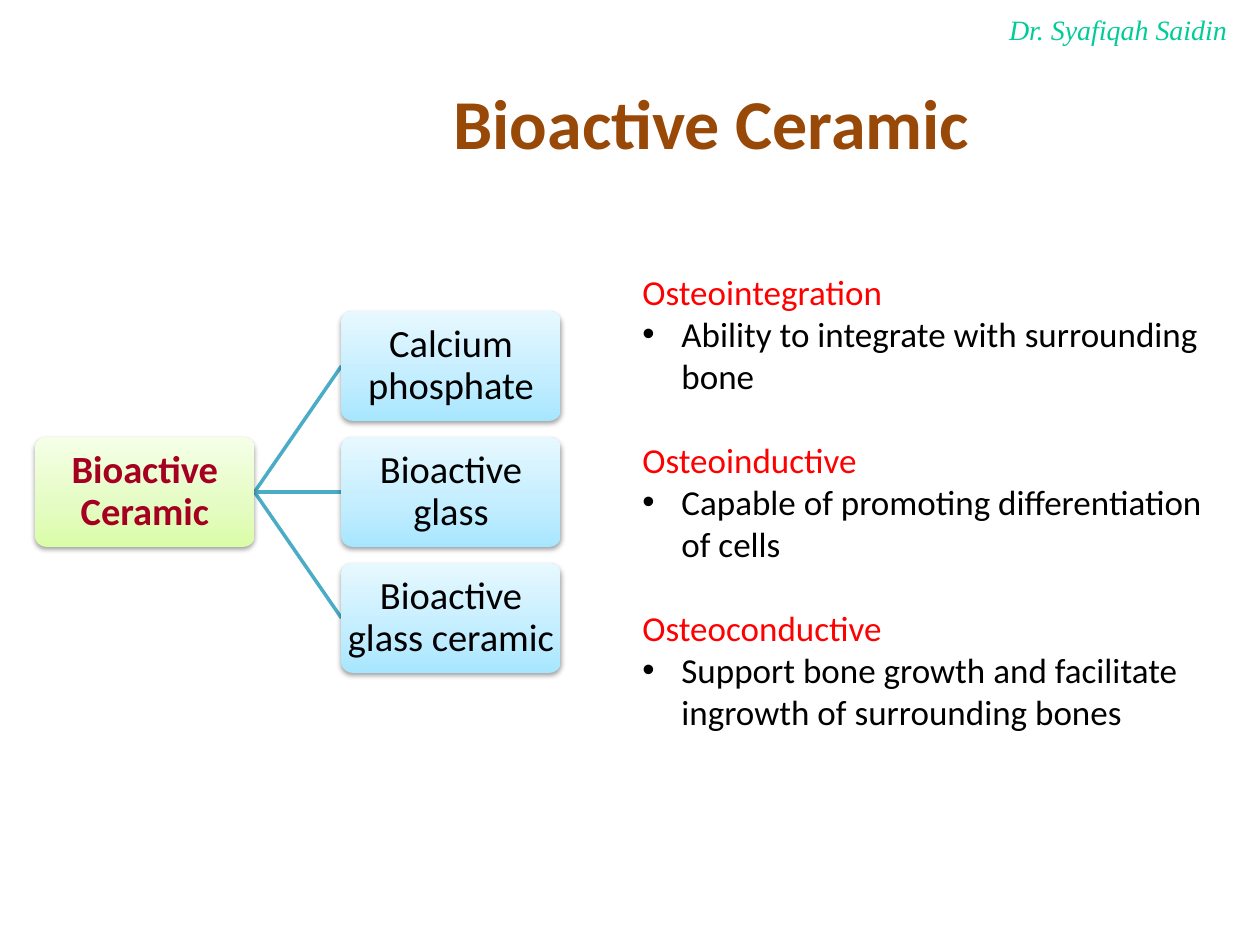
import pptx
import pptx.util
import pptx.dml.color
import pptx.enum.shapes
import pptx.enum.text
import pptx.oxml
import pptx.oxml.ns
from pptx.util import Inches

NAMESPACE = pptx.oxml.ns.nsdecls("a")
ALIGN = pptx.enum.text.PP_ALIGN
ANCHOR = pptx.enum.text.MSO_ANCHOR


def color(hex_string):
    return pptx.dml.color.RGBColor.from_string(hex_string)


def format_font(paragraph, size, hex_string, name="Calibri", bold=False, italic=False):
    for run in paragraph.runs:
        run.font.name = name
        run.font.size = pptx.util.Pt(size)
        run.font.bold = bold
        run.font.italic = italic
        run.font.color.rgb = color(hex_string)


presentation = pptx.Presentation()
presentation.slide_width = Inches(10)
presentation.slide_height = Inches(7.5)
slide = presentation.slides.add_slide(presentation.slide_layouts[5])

# Title
title = slide.shapes.title
title.left, title.top = Inches(3.5), Inches(0.58)
title.width, title.height = Inches(4.34), Inches(0.77)
title.text_frame.text = "Bioactive Ceramic"
title.text_frame.word_wrap = False
title.text_frame.auto_size = pptx.enum.text.MSO_AUTO_SIZE.NONE
title.text_frame.vertical_anchor = ANCHOR.MIDDLE
title.text_frame.paragraphs[0].alignment = ALIGN.LEFT
format_font(title.text_frame.paragraphs[0], 40, "984807", bold=True)

# Author
author = slide.shapes.add_textbox(Inches(7.91), Inches(0.05), Inches(2.01), Inches(0.37))
author.text_frame.text = "Dr. Syafiqah Saidin"
author.text_frame.word_wrap = False
format_font(author.text_frame.paragraphs[0], 16, "00CC99", "Times New Roman", italic=True)

# Hierarchy: one root and three branches
box_width, box_height = 1.74, 0.87
root_left, branch_left = 0.28, 2.71
root_top, row_step = 3.47, 1
green = ("DAFDA7", "E4FCC2", "F5FFE7")
blue = ("A7E6FF", "C1EDFF", "E7F8FF")
nodes = [("Bioactive Ceramic", root_left, root_top, green, "A50021", True)]
for row, text in enumerate(("Calcium phosphate", "Bioactive glass", "Bioactive glass ceramic")):
    nodes.append((text, branch_left, root_top + (row - 1) * row_step, blue, "000000", False))

# Lines from the root to each branch
for text, left, top, *style in nodes[1:]:
    line = slide.shapes.add_connector(
        pptx.enum.shapes.MSO_CONNECTOR.STRAIGHT,
        Inches(root_left + box_width), Inches(root_top + box_height / 2),
        Inches(left), Inches(top + box_height / 2))
    line.line.color.rgb = color("4BACC6")
    line.line.width = pptx.util.Pt(2)
    line._element.spPr.append(pptx.oxml.parse_xml(f"<a:effectLst {NAMESPACE}/>"))

# Boxes
for text, left, top, gradient, text_color, bold in nodes:
    box = slide.shapes.add_shape(
        pptx.enum.shapes.MSO_SHAPE.ROUNDED_RECTANGLE,
        Inches(left), Inches(top), Inches(box_width), Inches(box_height))
    box.adjustments[0] = 0.1
    box.line.fill.background()
    stops = "".join(
        f'<a:gs pos="{position}"><a:srgbClr val="{stop}"/></a:gs>'
        for position, stop in zip((0, 35000, 100000), gradient))
    box._element.spPr.find(pptx.oxml.ns.qn("a:ln")).addprevious(pptx.oxml.parse_xml(
        f'<a:gradFill {NAMESPACE} rotWithShape="1"><a:gsLst>{stops}</a:gsLst>'
        '<a:lin ang="16200000" scaled="1"/></a:gradFill>'))
    box._element.spPr.append(pptx.oxml.parse_xml(
        f'<a:effectLst {NAMESPACE}><a:outerShdw blurRad="{pptx.util.Pt(3.1)}" '
        f'dist="{pptx.util.Pt(1.6)}" dir="5400000" rotWithShape="0">'
        '<a:srgbClr val="000000"><a:alpha val="38000"/></a:srgbClr>'
        '</a:outerShdw></a:effectLst>'))

    frame = box.text_frame
    frame.text = text
    frame.word_wrap = True
    frame.vertical_anchor = ANCHOR.MIDDLE
    frame.margin_left = frame.margin_right = Inches(0.02)
    frame.margin_top = frame.margin_bottom = Inches(0.02)
    paragraph = frame.paragraphs[0]
    paragraph.alignment = ALIGN.CENTER
    paragraph.line_spacing = 0.9
    format_font(paragraph, 22, text_color, bold=bold)

# Definitions
definitions = (
    ("Osteointegration", "Ability to integrate with surrounding bone"),
    ("Osteoinductive", "Capable of promoting differentiation of cells"),
    ("Osteoconductive", "Support bone growth and facilitate ingrowth of surrounding bones"),
)
definition_box = slide.shapes.add_textbox(Inches(5), Inches(2.1), Inches(4.73), Inches(4.14))
frame = definition_box.text_frame
frame.word_wrap = True
for index, (term, meaning) in enumerate(definitions):
    if index == 0:
        heading = frame.paragraphs[0]
    else:
        heading = frame.add_paragraph()
        heading.space_before = pptx.util.Pt(24)
    heading.text = term
    format_font(heading, 20, "FF0000")

    bullet = frame.add_paragraph()
    bullet.text = meaning
    properties = bullet._p.get_or_add_pPr()
    properties.set("marL", str(Inches(0.31)))
    properties.set("indent", str(Inches(-0.31)))
    properties.append(pptx.oxml.parse_xml(f'<a:buFont {NAMESPACE} typeface="Arial"/>'))
    properties.append(pptx.oxml.parse_xml(f'<a:buChar {NAMESPACE} char="•"/>'))
    format_font(bullet, 20, "000000")

presentation.save("out.pptx")
